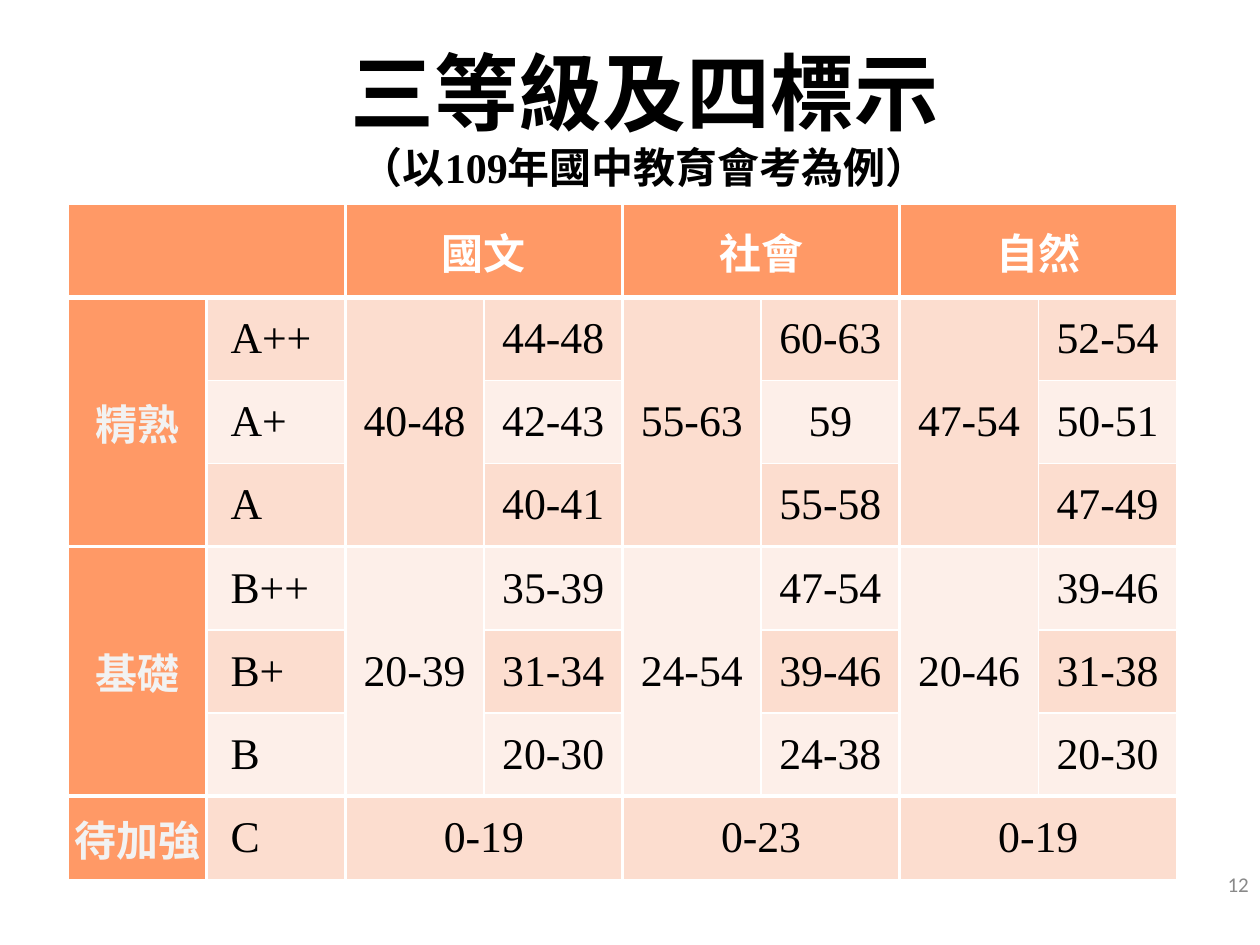
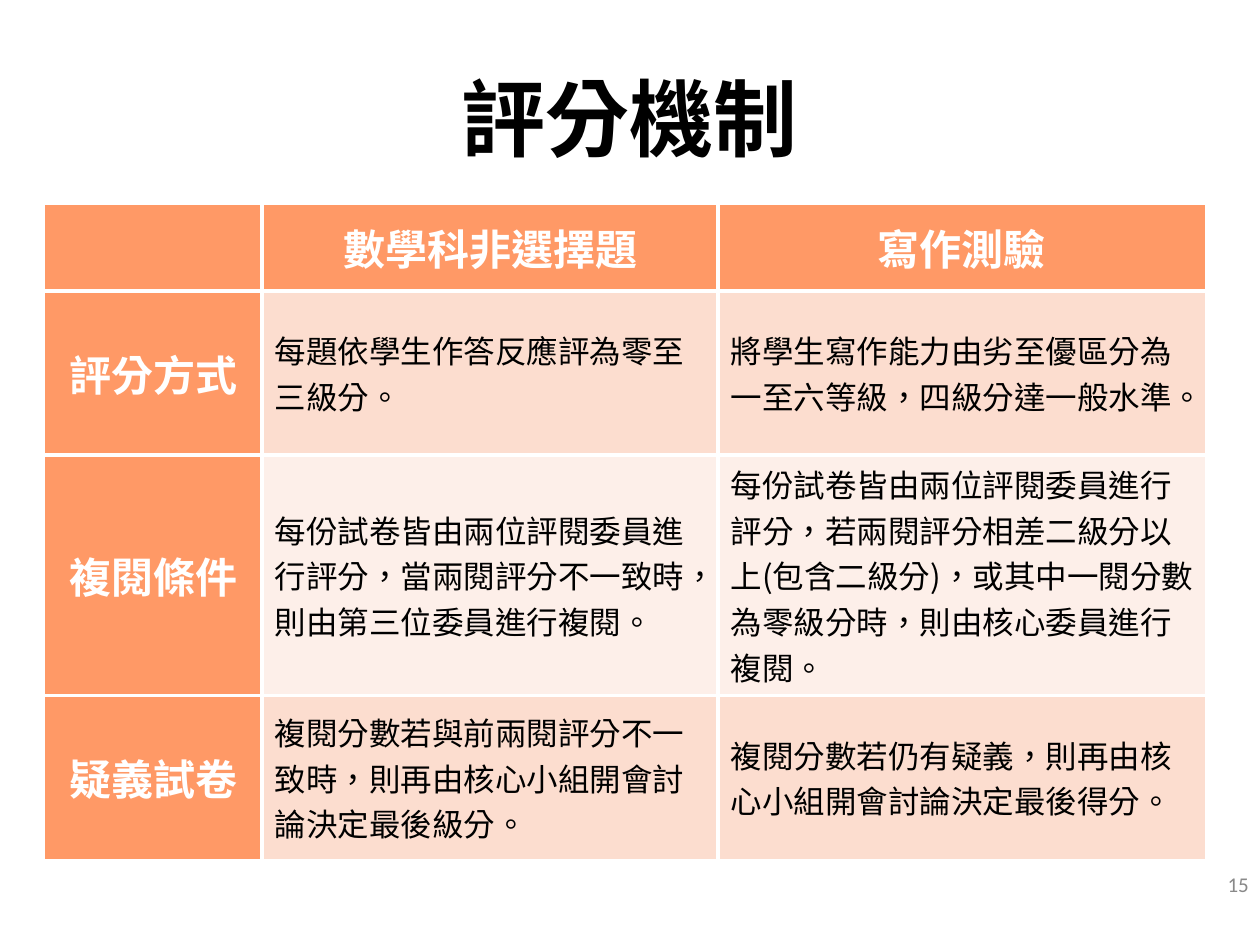
from dataclasses import dataclass
from typing import NamedTuple

from lxml.etree import SubElement
from pptx import Presentation
from pptx.dml.color import RGBColor
from pptx.enum.text import MSO_ANCHOR, MSO_AUTO_SIZE, PP_ALIGN
from pptx.oxml import parse_xml
from pptx.oxml.ns import nsdecls, qn
from pptx.util import Inches, Pt

COLOURS = {
    "black": "000000",
    "white": "FFFFFF",
    "pale": "F2F2F2",
    "number": "898989",
    "orange": "FF9966",
    "band": "FCDDCF",
    "light_band": "FDEFE9",
}
CJK = "Noto Sans CJK SC"
SERIF = "Times New Roman"


class TextStyle(NamedTuple):
    size: float
    font: str
    colour: str
    bold: bool = False
    align: PP_ALIGN = PP_ALIGN.CENTER


class Margins(NamedTuple):
    side: float
    end: float


class Entry(NamedTuple):
    row: int
    column: int
    text: str
    style: TextStyle
    rows: int = 1
    columns: int = 1
    indent: float = 0


@dataclass
class Grid:
    left: float
    top: float
    widths: list[float]
    heights: list[float]
    column_lines: list[float]
    row_lines: list[float]
    margins: Margins
    entries: list[Entry]


class Subject(NamedTuple):
    name: str
    levels: list[str]
    scores: list[str]


TITLE = TextStyle(48, CJK, "black", True)
NUMBER = TextStyle(12, "Calibri", "number", align=PP_ALIGN.RIGHT)
SUBJECT = TextStyle(24, "Arial", "white", True)
LEVEL = SUBJECT._replace(colour="pale")
SCORE = TextStyle(25, SERIF, "black")
GRADE = SCORE._replace(align=PP_ALIGN.LEFT)
HEADING = TextStyle(24, CJK, "white", True)
DETAIL = TextStyle(18, CJK, "black", align=PP_ALIGN.LEFT)

LEVELS = ["精熟", "基礎", "待加強"]
LEVEL_ROWS = [(1, 3), (4, 3), (7, 1)]
GRADES = ["A++", "A+", "A", "B++", "B+", "B", "C"]
SUBJECTS = [
    Subject("國文", ["40-48", "20-39", "0-19"],
            ["44-48", "42-43", "40-41", "35-39", "31-34", "20-30"]),
    Subject("社會", ["55-63", "24-54", "0-23"],
            ["60-63", "59", "55-58", "47-54", "39-46", "24-38"]),
    Subject("自然", ["47-54", "20-46", "0-19"],
            ["52-54", "50-51", "47-49", "39-46", "31-38", "20-30"]),
]
MECHANISM = [
    ["", "數學科非選擇題", "寫作測驗"],
    ["評分方式", "每題依學生作答反應評為零至三級分。",
     "將學生寫作能力由劣至優區分為一至六等級，四級分達一般水準。"],
    ["複閱條件",
     "每份試卷皆由兩位評閱委員進行評分，當兩閱評分不一致時，則由第三位委員進行複閱。",
     "每份試卷皆由兩位評閱委員進行評分，若兩閱評分相差二級分以上(包含二級分)，"
     "或其中一閱分數為零級分時，則由核心委員進行複閱。"],
    ["疑義試卷", "複閱分數若與前兩閱評分不一致時，則再由核心小組開會討論決定最後級分。",
     "複閱分數若仍有疑義，則再由核心小組開會討論決定最後得分。"],
]


def rgb(name: str) -> RGBColor:
    return RGBColor.from_string(COLOURS[name])


def style_paragraph(para, style: TextStyle) -> None:
    para.alignment = style.align
    font = para.font
    font.size = Pt(style.size)
    font.name = style.font
    font.bold = style.bold
    font.color.rgb = rgb(style.colour)
    defaults = para._p.pPr.find(qn("a:defRPr"))
    defaults.set("lang", "zh-TW")
    SubElement(defaults, qn("a:ea")).set("typeface", CJK)


def add_page(deck, heading: str, title_width: float, number: str):
    page = deck.slides.add_slide(deck.slide_layouts[5])
    title = page.shapes.title
    title.left, title.top = Inches(0.5), Inches(0.3)
    title.width, title.height = Inches(title_width), Inches(1.25)
    title.text_frame.auto_size = MSO_AUTO_SIZE.NONE
    title.text_frame.vertical_anchor = MSO_ANCHOR.MIDDLE
    para = title.text_frame.paragraphs[0]
    para.add_run().text = heading
    style_paragraph(para, TITLE)

    box = page.shapes.add_textbox(Inches(7.68), Inches(6.82), Inches(2.33), Inches(0.4))
    box.text_frame.word_wrap = True
    box.text_frame.vertical_anchor = MSO_ANCHOR.MIDDLE
    box.text_frame.text = number
    style_paragraph(box.text_frame.paragraphs[0], NUMBER)
    return page


def add_subtitle(para, parts: list[tuple[str, str]]) -> None:
    para.add_line_break()
    for text, font in parts:
        span = para.add_run()
        span.text = text
        span.font.size = Pt(24)
        span.font.name = font


def set_borders(cell, widths: dict[str, float]) -> None:
    properties = cell._tc.get_or_add_tcPr()
    for index, (side, width) in enumerate(widths.items()):
        properties.insert(index, parse_xml(
            f'<a:ln{side} {nsdecls("a")} w="{Pt(width)}"><a:solidFill>'
            f'<a:srgbClr val="{COLOURS["white"]}"/></a:solidFill></a:ln{side}>'))


def cell_colour(row: int, column: int) -> str:
    if row == 0 or column == 0:
        return "orange"
    return "band" if row % 2 else "light_band"


def draw_entry(table, grid: Grid, entry: Entry) -> None:
    cell = table.cell(entry.row, entry.column)
    last_row, last_column = entry.row + entry.rows, entry.column + entry.columns
    if entry.rows > 1 or entry.columns > 1:
        cell.merge(table.cell(last_row - 1, last_column - 1))
    cell.fill.solid()
    cell.fill.fore_color.rgb = rgb(cell_colour(entry.row, entry.column))
    set_borders(cell, {
        "L": grid.column_lines[entry.column],
        "R": grid.column_lines[last_column],
        "T": grid.row_lines[entry.row],
        "B": grid.row_lines[last_row],
    })
    cell.vertical_anchor = MSO_ANCHOR.MIDDLE
    cell.margin_left = Inches(grid.margins.side + entry.indent)
    cell.margin_right = Inches(grid.margins.side)
    cell.margin_top = cell.margin_bottom = Inches(grid.margins.end)
    if entry.text:
        cell.text = entry.text
        style_paragraph(cell.text_frame.paragraphs[0], entry.style)


def draw_grid(page, grid: Grid) -> None:
    table = page.shapes.add_table(
        len(grid.heights), len(grid.widths), Inches(grid.left), Inches(grid.top),
        Inches(sum(grid.widths)), Inches(sum(grid.heights))).table
    table.first_row = table.horz_banding = False
    for column, width in zip(table.columns, grid.widths):
        column.width = Inches(width)
    for row, height in zip(table.rows, grid.heights):
        row.height = Inches(height)
    for entry in grid.entries:
        draw_entry(table, grid, entry)


def grade_entries() -> list[Entry]:
    entries = [Entry(0, 0, "", SUBJECT, columns=2)]
    for level, (row, rows) in zip(LEVELS, LEVEL_ROWS):
        entries.append(Entry(row, 0, level, LEVEL, rows=rows))
    for row, grade in enumerate(GRADES, 1):
        entries.append(Entry(row, 1, grade, GRADE, indent=0.17))
    for index, subject in enumerate(SUBJECTS):
        column = 2 + 2 * index
        entries.append(Entry(0, column, subject.name, SUBJECT, columns=2))
        for level, (row, rows) in zip(subject.levels, LEVEL_ROWS):
            columns = 2 if rows == 1 else 1
            entries.append(Entry(row, column, level, SCORE, rows, columns))
        for row, score in enumerate(subject.scores, 1):
            entries.append(Entry(row, column + 1, score, SCORE))
    return entries


def mechanism_entries() -> list[Entry]:
    return [
        Entry(row, column, text, DETAIL if row and column else HEADING)
        for row, texts in enumerate(MECHANISM)
        for column, text in enumerate(texts)
    ]


def main() -> None:
    deck = Presentation()
    deck.slide_width, deck.slide_height = Inches(10), Inches(7.5)

    grades = add_page(deck, "三等級及四標示", 9.23, "12")
    add_subtitle(grades.shapes.title.text_frame.paragraphs[0],
                 [("（以", CJK), ("109", SERIF), ("年國中教育會考為例）", CJK)])
    draw_grid(grades, Grid(
        0.54, 1.62, [1.1] * 8, [0.74] + [0.66] * 7,
        [1, 2.25, 2.25, 1, 2.25, 1, 2.25, 1, 1],
        [1, 3, 1, 1, 2.25, 1, 1, 2.25, 1],
        Margins(0.02, 0), grade_entries()))

    mechanism = add_page(deck, "評分機制", 9, "15")
    draw_grid(mechanism, Grid(
        0.35, 1.62, [1.73, 3.62, 3.87], [0.69, 1.3, 1.91, 1.3],
        [1, 2.25, 2.25, 1], [1, 3, 2.25, 2.25, 1],
        Margins(0.1, 0.05), mechanism_entries()))

    deck.save("out.pptx")


if __name__ == "__main__":
    main()
